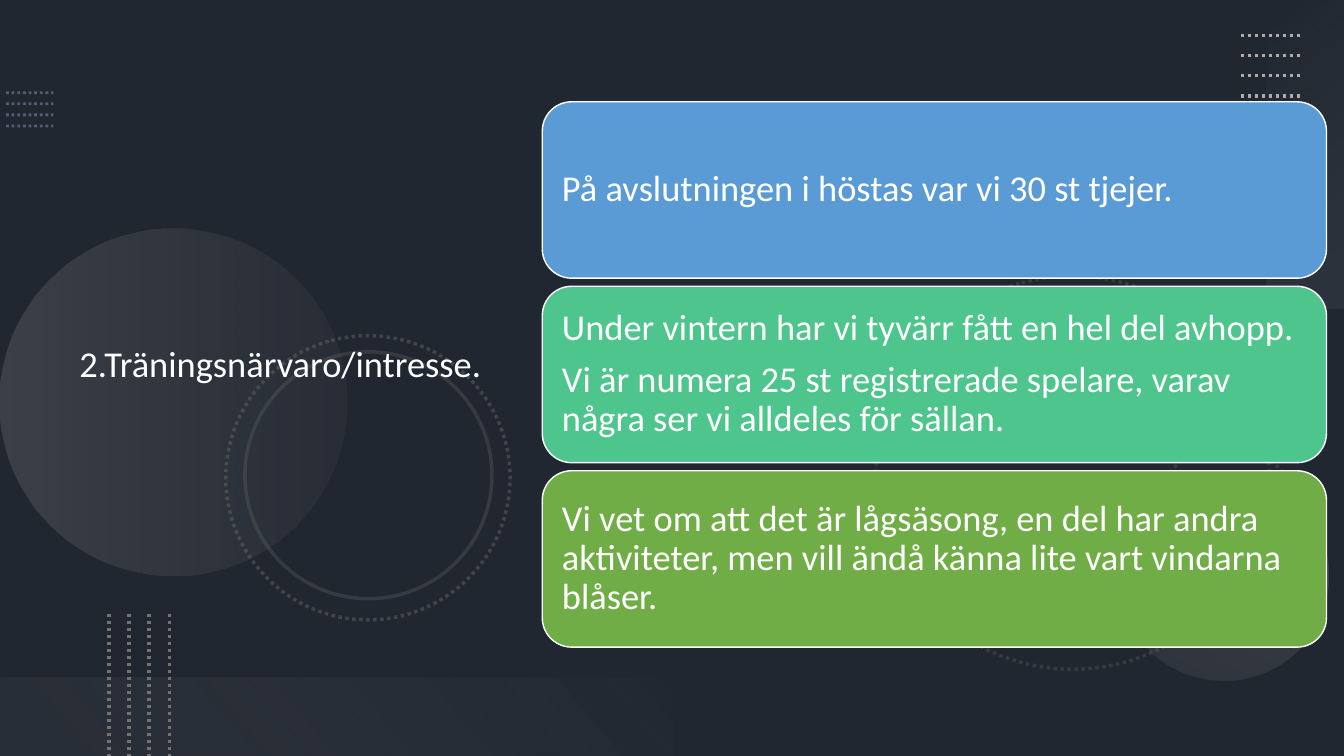
from dataclasses import dataclass

from lxml import etree
from pptx import Presentation
from pptx import util as u
from pptx.dml.color import RGBColor
from pptx.enum import dml, shapes, text
from pptx.oxml.ns import qn

SLIDE_WIDTH, SLIDE_HEIGHT = u.Inches(13.33), u.Inches(7.5)
COLUMNS, ROWS = 160, 90
FONT, FONT_SIZE = "Calibri", 26
COLOURS = {
    "background": "44546A", "shade": "000000", "white": "FFFFFF",
    "slate": "8497B0", "grey": "767171", "silver": "AFABAB",
    "mist": "F5F5F5", "pale": "F1F0F0",
    "blue": "5B9BD5", "mint": "4DC58D", "green": "70AD47",
}


@dataclass(frozen=True)
class Box:
    left: float
    top: float
    width: float
    height: float
    rotation: float = 0


@dataclass(frozen=True)
class Ring:
    box: Box
    opacity: int
    dotted: bool = True


@dataclass(frozen=True)
class Stop:
    position: int
    colour: str
    opacity: int


@dataclass(frozen=True)
class Glow:
    kind: shapes.MSO_SHAPE
    box: Box
    stops: tuple[Stop, Stop]
    angle: int


@dataclass(frozen=True)
class DotLines:
    left: float
    top: float
    length: float
    gap: float
    colour: str
    weight: float
    opacity: int = 100
    vertical: bool = False
    count: int = 4


@dataclass(frozen=True)
class Card:
    colour: str
    paragraphs: tuple[str, ...]


def across(columns: float) -> int:
    return round(SLIDE_WIDTH * columns / COLUMNS)


def down(rows: float) -> int:
    return round(SLIDE_HEIGHT * rows / ROWS)


def rgb(name: str) -> RGBColor:
    return RGBColor.from_string(COLOURS[name])


def set_opacity(element, opacity: int) -> None:
    for colour in element.iter(qn("a:srgbClr")):
        etree.SubElement(colour, qn("a:alpha"), val=str(opacity * 1000))


def style_line(line, colour: str, weight: float, dotted: bool) -> None:
    line.color.rgb = rgb(colour)
    line.width = u.Pt(weight)
    if dotted:
        line.dash_style = dml.MSO_LINE.ROUND_DOT


def add_shape(slide, kind: shapes.MSO_SHAPE, box: Box):
    shape = slide.shapes.add_shape(
        kind, across(box.left), down(box.top), across(box.width), down(box.height))
    shape.rotation = box.rotation
    shape.shadow.inherit = False
    shape.fill.background()
    shape.line.fill.background()
    return shape


def add_shade(slide) -> None:
    shape = add_shape(slide, shapes.MSO_SHAPE.RECTANGLE, Box(0, 0, COLUMNS, ROWS))
    shape.fill.solid()
    shape.fill.fore_color.rgb = rgb("shade")
    set_opacity(shape._element.spPr, 53)


def add_ring(slide, ring: Ring) -> None:
    shape = add_shape(slide, shapes.MSO_SHAPE.OVAL, ring.box)
    style_line(shape.line, "grey", 2.5, ring.dotted)
    set_opacity(shape._element.spPr, ring.opacity)


def add_glow(slide, glow: Glow) -> None:
    shape = add_shape(slide, glow.kind, glow.box)
    properties = shape._element.spPr
    gradient = etree.Element(qn("a:gradFill"), rotWithShape="1")
    stop_list = etree.SubElement(gradient, qn("a:gsLst"))
    for stop in glow.stops:
        entry = etree.SubElement(stop_list, qn("a:gs"), pos=str(stop.position * 1000))
        colour = etree.SubElement(entry, qn("a:srgbClr"), val=COLOURS[stop.colour])
        etree.SubElement(colour, qn("a:alpha"), val=str(stop.opacity * 1000))
    etree.SubElement(gradient, qn("a:lin"), ang=str(glow.angle * 60000), scaled="0")
    properties.replace(properties.find(qn("a:noFill")), gradient)


def add_dot_lines(slide, lines: DotLines) -> None:
    for index in range(lines.count):
        offset = index * lines.gap
        left = lines.left + (offset if lines.vertical else 0)
        top = lines.top + (0 if lines.vertical else offset)
        right = left + (0 if lines.vertical else lines.length)
        bottom = top + (lines.length if lines.vertical else 0)
        connector = slide.shapes.add_connector(
            shapes.MSO_CONNECTOR.STRAIGHT,
            across(left), down(top), across(right), down(bottom))
        style_line(connector.line, lines.colour, lines.weight, True)
        properties = connector._element.spPr
        etree.SubElement(properties, qn("a:effectLst"))
        if lines.opacity < 100:
            set_opacity(properties, lines.opacity)


def write_text(frame, paragraphs: tuple[str, ...]) -> None:
    frame.word_wrap = True
    frame.vertical_anchor = text.MSO_ANCHOR.MIDDLE
    for index, wording in enumerate(paragraphs):
        paragraph = frame.add_paragraph() if index else frame.paragraphs[0]
        paragraph.alignment = text.PP_ALIGN.LEFT
        paragraph.line_spacing = 0.9
        if index:
            paragraph.space_before = u.Pt(0.35 * FONT_SIZE)
        run = paragraph.add_run()
        run.text = wording
        run.font.name = FONT
        run.font.size = u.Pt(FONT_SIZE)
        run.font.color.rgb = rgb("white")


def add_title(slide, wording: str, box: Box) -> None:
    shape = slide.shapes.add_textbox(
        across(box.left), down(box.top), across(box.width), down(box.height))
    write_text(shape.text_frame, (wording,))


def add_card(slide, card: Card, box: Box) -> None:
    shape = add_shape(slide, shapes.MSO_SHAPE.ROUNDED_RECTANGLE, box)
    shape.fill.solid()
    shape.fill.fore_color.rgb = rgb(card.colour)
    style_line(shape.line, "white", 1, False)
    frame = shape.text_frame
    frame.margin_left = frame.margin_right = u.Inches(0.11)
    frame.margin_top = frame.margin_bottom = u.Inches(0.11)
    write_text(frame, card.paragraphs)


OVAL, RECTANGLE = shapes.MSO_SHAPE.OVAL, shapes.MSO_SHAPE.RECTANGLE
DECORATIONS = (
    DotLines(0.72, 11.04, 5.64, 1.32, "slate", 2, opacity=50),
    Ring(Box(104.28, 32.88, 46.8, 46.8, 75), 25),
    Ring(Box(136.92, 53.16, 18.12, 18.12, 270), 25),
    Glow(OVAL, Box(0, 27.24, 41.28, 41.28, 270),
         (Stop(0, "silver", 20), Stop(100, "grey", 10)), 90),
    Glow(OVAL, Box(133.2, 56.04, 24.96, 24.96, 210),
         (Stop(0, "silver", 10), Stop(100, "silver", 20)), 90),
    Ring(Box(26.88, 39.96, 33.84, 33.84, 75), 40),
    Ring(Box(29.16, 41.88, 29.4, 29.4, 75), 25, dotted=False),
    Glow(RECTANGLE, Box(137.04, 13.68, 36.72, 9.36, 270),
         (Stop(0, "mist", 0), Stop(100, "silver", 10)), 140),
    DotLines(147.72, 4.2, 7.2, 2.4, "silver", 2.5),
    Glow(RECTANGLE, Box(0, 80.64, 80, 9.36, 180),
         (Stop(10, "grey", 10), Stop(100, "pale", 0)), 140),
    DotLines(12.96, 73.08, 16.92, 2.4, "grey", 2.5, vertical=True),
)
DRAWERS = {Ring: add_ring, Glow: add_glow, DotLines: add_dot_lines}
CARDS = (
    Card("blue", ("På avslutningen i höstas var vi 30 st tjejer.",)),
    Card("mint", ("Under vintern har vi tyvärr fått en hel del avhopp.",
                  "Vi är numera 25 st registrerade spelare, varav några ser vi alldeles för sällan.")),
    Card("green", ("Vi vet om att det är lågsäsong, en del har andra aktiviteter, "
                   "men vill ändå känna lite vart vindarna blåser.",)),
)


def main() -> None:
    presentation = Presentation()
    presentation.slide_width, presentation.slide_height = SLIDE_WIDTH, SLIDE_HEIGHT
    slide = presentation.slides.add_slide(presentation.slide_layouts[6])
    slide.background.fill.solid()
    slide.background.fill.fore_color.rgb = rgb("background")
    add_shade(slide)
    for decoration in DECORATIONS:
        DRAWERS[type(decoration)](slide, decoration)
    add_title(slide, "2.Träningsnärvaro/intresse.", Box(8.28, 6.48, 55.08, 74.04))
    for index, card in enumerate(CARDS):
        add_card(slide, card, Box(64.56, 12.12 + index * 21.96, 93.36, 21))
    presentation.save("out.pptx")


if __name__ == "__main__":
    main()
